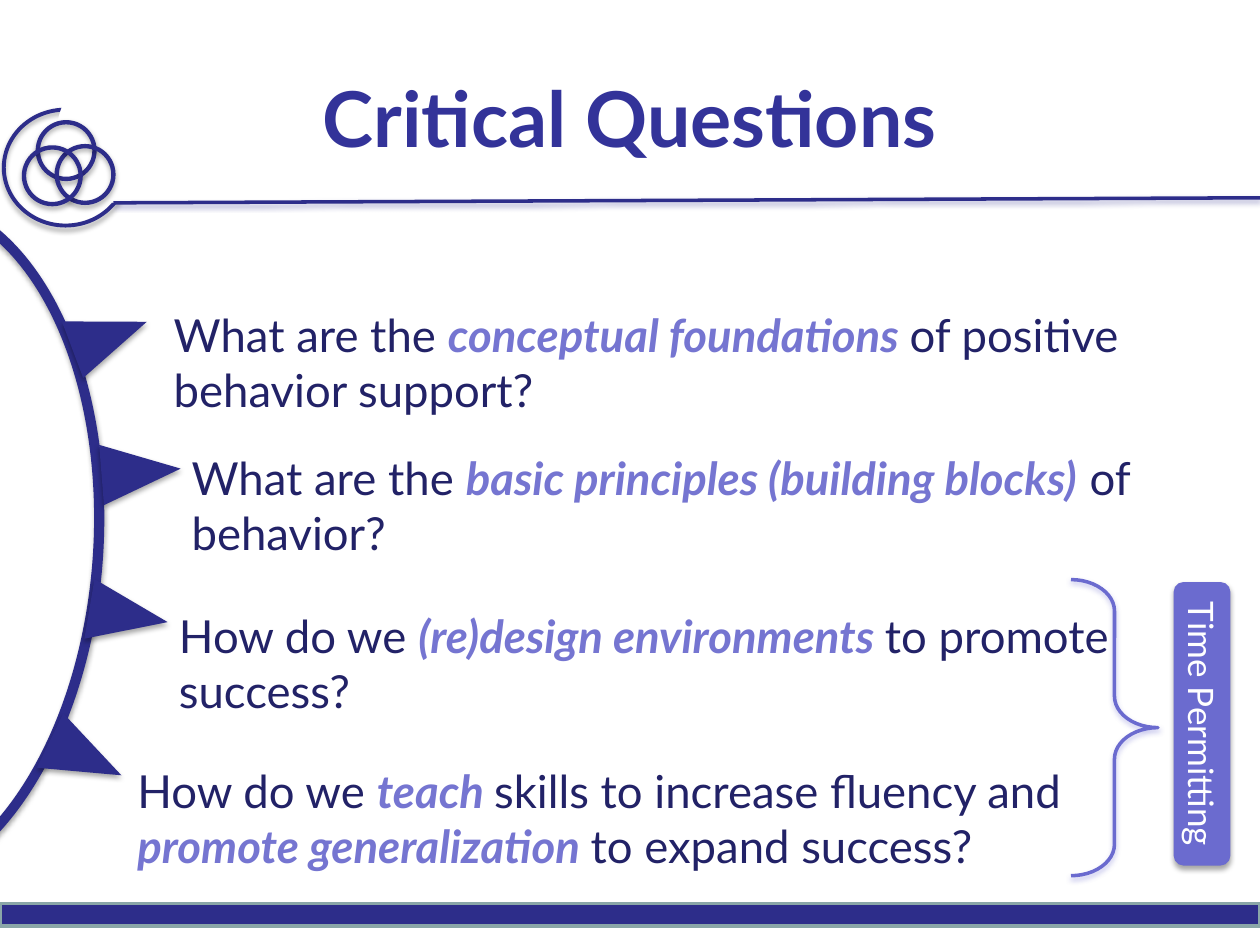
from lxml import etree
from pptx import Presentation
from pptx.dml.color import RGBColor
from pptx.enum.shapes import MSO_CONNECTOR, MSO_SHAPE
from pptx.enum.text import MSO_ANCHOR, PP_ALIGN
from pptx.oxml.ns import qn
from pptx.util import Inches, Pt

OVAL, RECT = MSO_SHAPE.OVAL, MSO_SHAPE.RECTANGLE
ROUND, BRACE = MSO_SHAPE.ROUNDED_RECTANGLE, MSO_SHAPE.RIGHT_BRACE
ARC, WEDGE = MSO_SHAPE.CIRCULAR_ARROW, MSO_SHAPE.ISOSCELES_TRIANGLE
STRAIGHT = MSO_CONNECTOR.STRAIGHT
CENTER, MIDDLE, TOP = PP_ALIGN.CENTER, MSO_ANCHOR.MIDDLE, MSO_ANCHOR.TOP

FONT = "Lato"
NAVY, VIOLET, INK, ACCENT = "2D2D8A", "6B6BCF", "222267", "7575D1"
WHITE, BLACK = "FFFFFF", "000000"

# Text left and top, inset, then runs; a True run is stressed.
QUESTIONS = [
    (1.28, 2.39, 0.1, [("What are the ", False), ("conceptual foundations ", True),
                       ("of positive behavior support?", False)]),
    (1.45, 3.54, 0.07, [("What are the ", False),
                        ("basic principles (building blocks)", True),
                        (" of behavior?", False)]),
    (1.35, 4.79, 0.07, [("How do we ", False), ("(re)design environments ", True),
                        ("to promote success?", False)]),
    (1.02, 6.02, 0.07, [("How do we ", False), ("teach ", True),
                        ("skills to increase fluency and ", False),
                        ("promote generalization ", True),
                        ("to expand success?", False)]),
]
# Wedge left, top and turn
WEDGES = [(0.63, 2.35, 69.4), (0.88, 3.43, 85.4),
          (0.78, 4.57, 99.6), (0.44, 5.7, 116)]


def color(code):
    return RGBColor.from_string(code)


def shade(shape, code=BLACK, alpha=35, dist=1.8):
    """Give a shape or connector a soft shadow straight below it."""
    props = shape._element.spPr
    for old in props.findall(qn("a:effectLst")):
        props.remove(old)
    fx = etree.SubElement(props, qn("a:effectLst"))
    cast = etree.SubElement(fx, qn("a:outerShdw"), blurRad=str(Pt(3.1)),
                            dist=str(Pt(dist)), dir="5400000", rotWithShape="0")
    tint = etree.SubElement(cast, qn("a:srgbClr"), val=code)
    etree.SubElement(tint, qn("a:alpha"), val=str(alpha * 1000))


def add(slide, kind, box, fill=None, line=None, width=1, turn=0):
    shape = slide.shapes.add_shape(kind, *map(Inches, box))
    shape.shadow.inherit = False
    shape.rotation = turn
    if fill:
        shape.fill.solid()
        shape.fill.fore_color.rgb = color(fill)
    else:
        shape.fill.background()
    if line:
        shape.line.color.rgb = color(line)
        shape.line.width = Pt(width)
    else:
        shape.line.fill.background()
    return shape


def style(font, size, code, bold=False, italic=False):
    font.name, font.size = FONT, Pt(size)
    font.bold, font.italic = bold, italic
    font.color.rgb = color(code)


def add_emblem(slide, box):
    """Three linked rings in an open circle, with a rule to the right edge."""
    left, top, wide, high = box
    shade(add(slide, OVAL, box, line=NAVY, width=2.25))
    add(slide, OVAL, (left + 0.42, top - 0.37, 1.11, 1.12), WHITE)
    for x, y in [(0.27, 0.1), (0.42, 0.29), (0.16, 0.3)]:
        shade(add(slide, OVAL, (left + x, top + y, 0.45, 0.45), line=NAVY, width=2.5))
    rule = slide.shapes.add_connector(STRAIGHT, Inches(left + 0.87), Inches(top + 0.74),
                                      Inches(10), Inches(top + 0.7))
    rule.line.color.rgb = color(NAVY)
    rule.line.width = Pt(2)
    shade(rule, NAVY, 38, 1.6)


def set_title(slide, box):
    title = slide.shapes.title
    title.left, title.top, title.width, title.height = map(Inches, box)
    frame = title.text_frame
    frame.text = "Critical Questions"
    frame.vertical_anchor = MIDDLE
    para = frame.paragraphs[0]
    para.alignment = CENTER
    style(para.runs[0].font, 44, "333399", bold=True)


def add_wheel(slide, box):
    """Curved band with a wedge pointing at each question."""
    band = add(slide, ARC, box, NAVY, turn=94.1)
    for i, value in enumerate([0.125, 0.397, 204.577, 112.485, 0.012]):
        band.adjustments[i] = value
    shade(band)
    for x, y, turn in WEDGES:
        shade(add(slide, WEDGE, (x, y, 0.48, 0.63), NAVY, turn=turn))


def add_question(slide, box, inset, parts):
    frame = slide.shapes.add_textbox(*map(Inches, box)).text_frame
    frame.word_wrap = True
    frame.vertical_anchor = TOP
    frame.margin_left = frame.margin_right = Inches(inset)
    frame.margin_top = frame.margin_bottom = Inches(inset / 2)
    para = frame.paragraphs[0]
    for text, stress in parts:
        run = para.add_run()
        run.text = text
        style(run.font, 26, ACCENT if stress else INK, stress, stress)


def add_aside(slide, box):
    """Brace with an upright label at its right."""
    left, top, wide, high = box
    brace = add(slide, BRACE, (left, top, 0.69, high), line=VIOLET, width=2)
    brace.adjustments[0] = 0.362
    shade(brace, VIOLET, 38, 1.6)
    long, thick = 2.24, 0.44
    label = add(slide, ROUND, (left + wide - (long + thick) / 2,
                               top + (high - thick) / 2 - 0.03, long, thick),
                VIOLET, VIOLET, 0.75, 90)
    shade(label)
    frame = label.text_frame
    frame.text = "Time Permitting"
    frame.vertical_anchor = MIDDLE
    para = frame.paragraphs[0]
    para.alignment = CENTER
    style(para.runs[0].font, 20, WHITE)


def main():
    deck = Presentation()
    deck.slide_width, deck.slide_height = Inches(10), Inches(7.5)
    slide = deck.slides.add_slide(deck.slide_layouts[5])
    add(slide, RECT, (0, 7.17, 10, 0.18), NAVY, "8AA6A8", 2)
    add_emblem(slide, (0.03, 0.87, 0.98, 0.92))
    set_title(slide, (0.5, 0.3, 9, 1.25))
    add_wheel(slide, (-3.66, 2.63, 5.58, 3.38))
    for left, top, inset, parts in QUESTIONS:
        add_question(slide, (left, top, 8.38, 0.75), inset, parts)
    add_aside(slide, (8.5, 4.6, 1.26, 2.35))
    deck.save("out.pptx")


if __name__ == "__main__":
    main()
